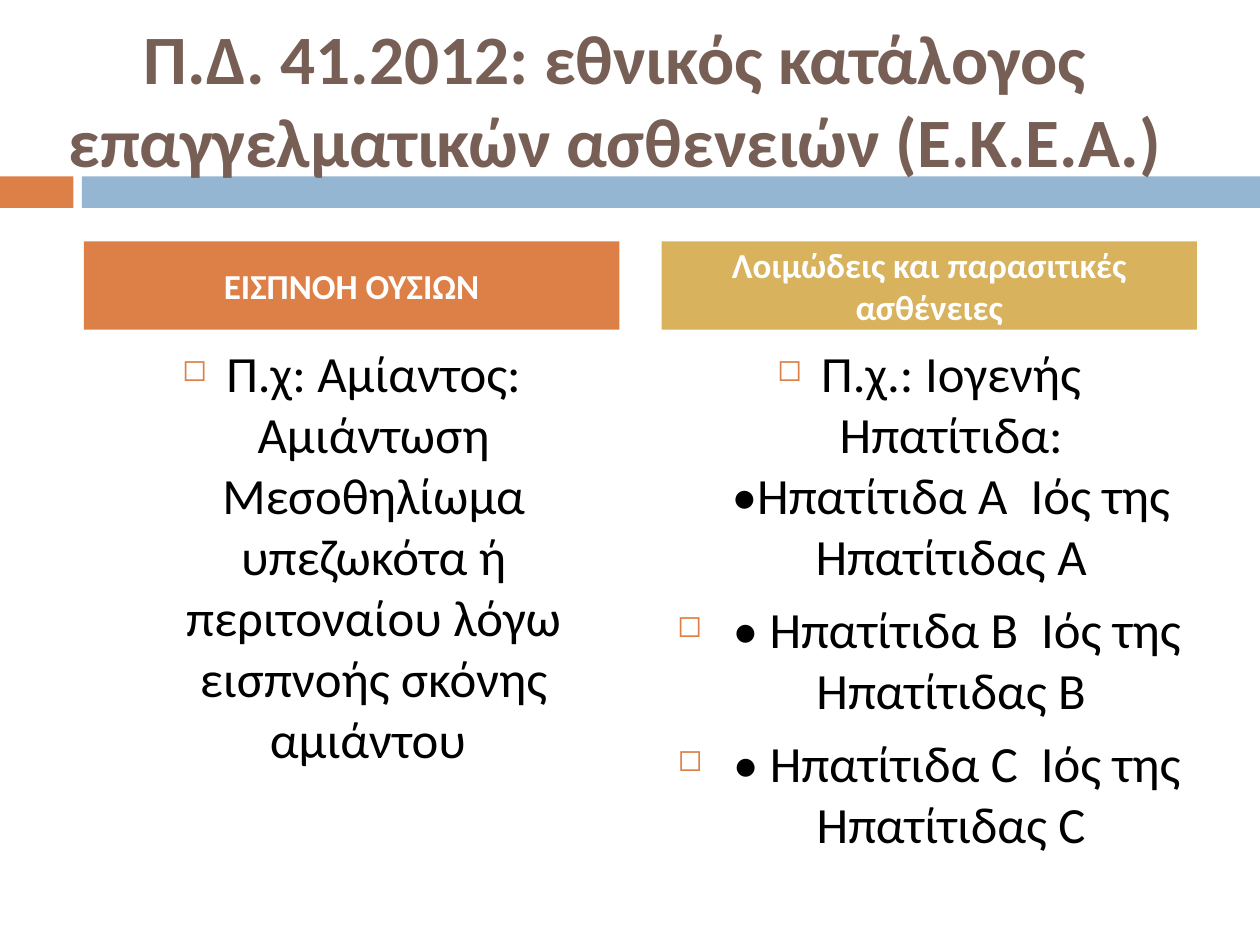
from dataclasses import dataclass

from lxml.etree import SubElement
from pptx import Presentation
from pptx.dml.color import RGBColor
from pptx.enum.shapes import MSO_SHAPE
from pptx.enum.text import MSO_ANCHOR, MSO_AUTO_SIZE, PP_ALIGN
from pptx.oxml.ns import qn
from pptx.util import Inches, Pt


@dataclass(frozen=True)
class Theme:
    font: str = "Calibri"
    brown: str = "775F55"
    orange: str = "DD8047"
    blue: str = "94B6D2"
    gold: str = "D8B25C"
    black: str = "000000"
    white: str = "FFFFFF"
    title_size: float = 39.6
    heading_size: float = 20
    body_size: float = 29
    paragraph_gap: float = 7
    bullet_indent: float = 0.35


class SlideBuilder:
    """Places elements on a grid of 120 columns by 90 rows."""

    def __init__(self, deck, theme):
        self.theme = theme
        self.column = deck.slide_width / 120
        self.row = deck.slide_height / 90
        self.page = deck.slides.add_slide(deck.slide_layouts[5])

    def area(self, left, top, width, height):
        return (round(left * self.column), round(top * self.row),
                round(width * self.column), round(height * self.row))

    def style(self, para, size, color, bold=False):
        para.alignment = PP_ALIGN.CENTER
        para.font.name = self.theme.font
        para.font.size = Pt(size)
        para.font.bold = bold
        para.font.color.rgb = RGBColor.from_string(color)

    def title(self, text, *cells):
        box = self.page.shapes.title
        box.left, box.top, box.width, box.height = self.area(*cells)
        frame = box.text_frame
        frame.text = text
        frame.auto_size = MSO_AUTO_SIZE.NONE
        frame.vertical_anchor = MSO_ANCHOR.MIDDLE
        self.style(frame.paragraphs[0], self.theme.title_size, self.theme.brown, True)

    def band(self, color, *cells):
        box = self.page.shapes.add_shape(MSO_SHAPE.RECTANGLE, *self.area(*cells))
        box.shadow.inherit = False
        box.fill.solid()
        box.fill.fore_color.rgb = RGBColor.from_string(color)
        box.line.fill.background()
        return box

    def heading(self, text, color, *cells):
        frame = self.band(color, *cells).text_frame
        frame.text = text
        frame.word_wrap = True
        frame.vertical_anchor = MSO_ANCHOR.MIDDLE
        self.style(frame.paragraphs[0], self.theme.heading_size, self.theme.white, True)

    def bullet(self, para):
        indent = Inches(self.theme.bullet_indent)
        properties = para._p.get_or_add_pPr()
        properties.set("marL", str(indent))
        properties.set("indent", str(-indent))
        color = SubElement(properties, qn("a:buClr"))
        SubElement(color, qn("a:srgbClr"), val=self.theme.orange)
        SubElement(properties, qn("a:buSzPct"), val="60000")
        SubElement(properties, qn("a:buChar"), char="◻")

    def bullet_list(self, items, *cells):
        frame = self.page.shapes.add_textbox(*self.area(*cells)).text_frame
        frame.word_wrap = True
        for index, item in enumerate(items):
            para = frame.add_paragraph() if index else frame.paragraphs[0]
            para.text = item
            self.bullet(para)
            self.style(para, self.theme.body_size, self.theme.black)
            if index:
                para.space_before = Pt(self.theme.paragraph_gap)


def main():
    deck = Presentation()
    deck.slide_width, deck.slide_height = Inches(10), Inches(7.5)
    theme = Theme()
    slide = SlideBuilder(deck, theme)

    # Title, drawn over the divider below it
    slide.band(theme.orange, 0, 16.8, 7, 3)
    slide.band(theme.blue, 7.8, 16.8, 112.2, 3)
    slide.title("Π.Δ. 41.2012: εθνικός κατάλογος επαγγελματικών ασθενειών (Ε.Κ.Ε.Α.)",
                0, 3.7, 117.2, 11.4)
    tree = slide.page.shapes._spTree
    tree.append(slide.page.shapes.title._element)

    # Two columns: heading and examples
    columns = [
        ("ΕΙΣΠΝΟΗ ΟΥΣΙΩΝ", theme.orange, 55.2,
         ["Π.χ: Αμίαντος: Αμιάντωση Μεσοθηλίωμα υπεζωκότα ή "
          "περιτοναίου λόγω εισπνοής σκόνης αμιάντου "]),
        ("Λοιμώδεις και παρασιτικές ασθένειες", theme.gold, 47,
         ["Π.χ.: Ιογενής Ηπατίτιδα: •Ηπατίτιδα Α  Ιός της Ηπατίτιδας Α",
          " • Ηπατίτιδα Β  Ιός της Ηπατίτιδας Β",
          " • Ηπατίτιδα C  Ιός της Ηπατίτιδας C"]),
    ]
    width, gutter = 51, 4
    for index, (heading, color, height, items) in enumerate(columns):
        left = 8 + index * (width + gutter)
        slide.heading(heading, color, left, 23, width, 8.4)
        slide.bullet_list(items, left, 32, width, height)

    deck.save("out.pptx")


if __name__ == "__main__":
    main()
